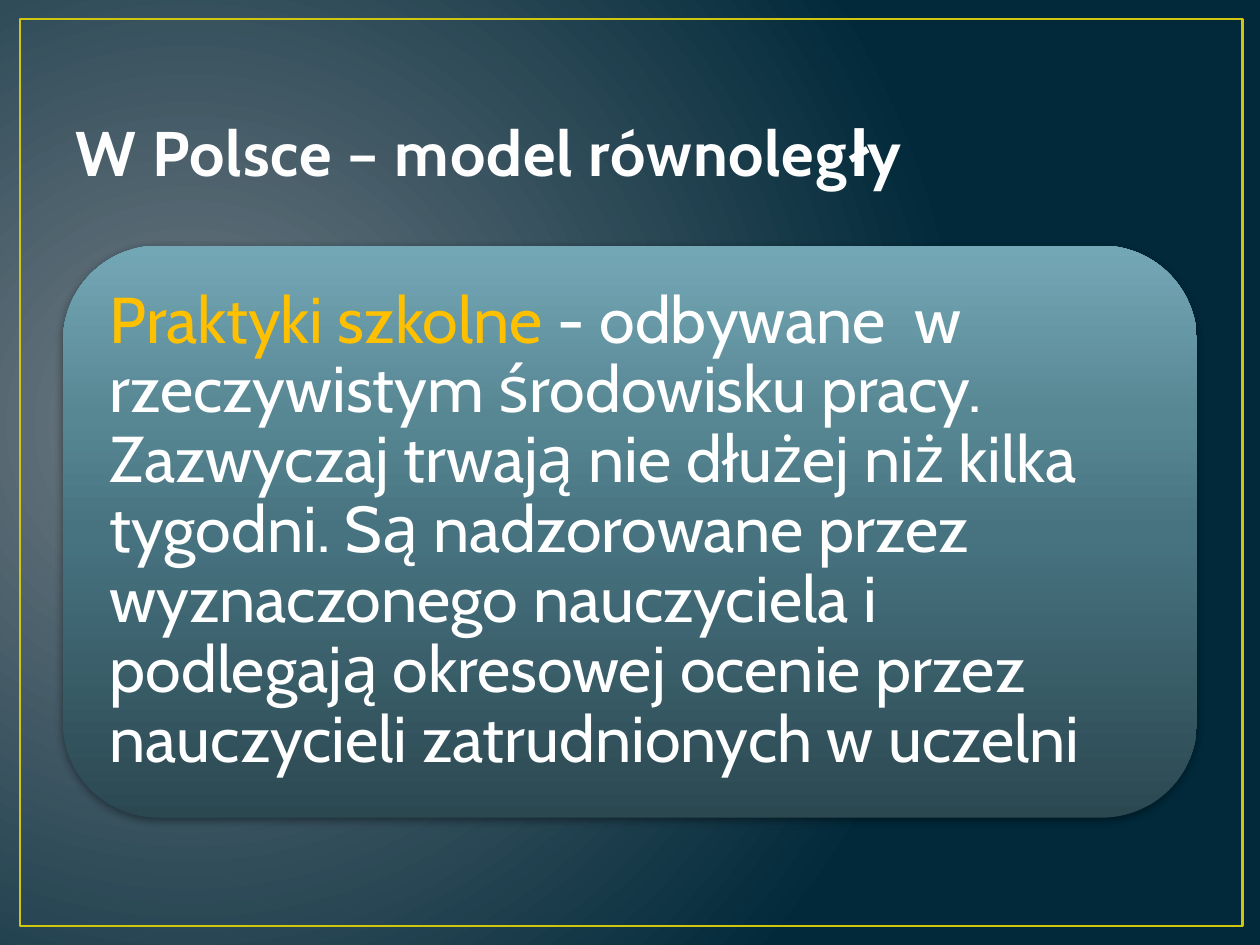
"""Build the slide on school practice in the parallel model."""
from lxml import etree
from pptx import Presentation
from pptx.dml.color import RGBColor
from pptx.enum.shapes import MSO_SHAPE
from pptx.enum.text import MSO_ANCHOR, PP_ALIGN
from pptx.oxml import parse_xml
from pptx.util import Inches, Pt

RECT, ROUND = MSO_SHAPE.RECTANGLE, MSO_SHAPE.ROUNDED_RECTANGLE
MID, LOW = MSO_ANCHOR.MIDDLE, MSO_ANCHOR.BOTTOM
LEFT = PP_ALIGN.LEFT
NS = "http://schemas.openxmlformats.org/drawingml/2006/main"

HUES = {"frame": "CFC60D", "title": "FEFEFE", "edge": "384F55",
        "key": "FFC000", "body": "FFFFFF", "shade": "000000"}
BACK = [(0, "717C84"), (100, "01293A")]
PANEL = [(0, "2B4851"), (50, "477380"), (70, "588794"), (100, "74A7B6")]
TITLE = [("W Polsce – model równoległy", "title")]
BODY = [
    ("Praktyki szkolne ", "key"),
    ("- odbywane  w rzeczywistym środowisku pracy. Zazwyczaj trwają nie "
     "dłużej niż kilka tygodni. Są nadzorowane przez wyznaczonego "
     "nauczyciela i podlegają okresowej ocenie przez nauczycieli "
     "zatrudnionych w uczelni", "body"),
]


def node(tag, attrs="", inner=""):
    return f'<a:{tag} xmlns:a="{NS}" {attrs}>{inner}</a:{tag}>'


def tint(name, inner=""):
    return node("srgbClr", f'val="{HUES[name]}"', inner)


def blend(fill, root, stops, way):
    fill.solid()
    old = root.xpath(".//p:bgPr/a:solidFill | ./p:spPr/a:solidFill")[0]
    marks = "".join(
        node("gs", f'pos="{pos * 1000}"', node("srgbClr", f'val="{hue}"'))
        for pos, hue in stops)
    new = node("gradFill", 'rotWithShape="1"', node("gsLst", "", marks) + way)
    old.getparent().replace(old, parse_xml(new))


def write(shape, runs, size, bold=False, anchor=MID, inset=None, line=None):
    frame = shape.text_frame
    frame.word_wrap = True
    frame.vertical_anchor = anchor
    if inset is not None:
        frame.margin_left = frame.margin_right = Inches(inset)
        frame.margin_top = frame.margin_bottom = Inches(inset)
    para = frame.paragraphs[0]
    para.alignment = LEFT
    if line:
        para.line_spacing = line
    for text, hue in runs:
        run = para.add_run()
        run.text = text
        font = run.font
        font.name, font.size, font.bold = "Cabin", Pt(size), bold
        font.color.rgb = RGBColor.from_string(HUES[hue])
    return para


def place(shape, box):
    shape.left, shape.top, shape.width, shape.height = map(Inches, box)


def main():
    deck = Presentation()
    deck.slide_width, deck.slide_height = Inches(10), Inches(7.5)
    slide = deck.slides.add_slide(deck.slide_layouts[5])
    focus = node("fillToRect", 'l="15000" t="50000" r="85000" b="60000"')
    blend(slide.background.fill, slide.element, BACK,
          node("path", 'path="circle"', focus))

    frame = slide.shapes.add_shape(
        RECT, *map(Inches, (0.16, 0.15, 9.7, 7.2)))
    frame.shadow.inherit = False
    frame.fill.background()
    frame.line.color.rgb = RGBColor.from_string(HUES["frame"])
    frame.line.width = Pt(1.5)

    title = slide.shapes.title
    place(title, (0.5, 0.3, 9, 1.25))
    para = write(title, TITLE, 36, bold=True, anchor=LOW)
    props = para.runs[0].font._element
    props.set("spc", "50")
    edge = node("ln", f'w="{Pt(1.05)}"', node("solidFill", "", tint("edge")))
    props.insert(0, parse_xml(edge))

    group = slide.shapes.add_group_shape()
    panel = group.shapes.add_shape(
        ROUND, *map(Inches, (0.5, 1.95, 9, 4.54)))
    blend(panel.fill, panel.element, PANEL, node("lin", 'ang="16200000"'))
    panel.line.fill.background()
    panel.shadow.inherit = False
    glow = panel.element.spPr.find(etree.QName(NS, "effectLst"))
    glow.append(parse_xml(node(
        "outerShdw", f'blurRad="{Pt(5)}" dist="{Pt(2)}" dir="5400000"',
        tint("shade", node("alpha", 'val="43000"')))))
    body = group.shapes.add_textbox(
        *map(Inches, (0.72, 2.17, 8.56, 4.1)))
    write(body, BODY, 37, inset=0.15, line=0.9)
    deck.save("out.pptx")


if __name__ == "__main__":
    main()
